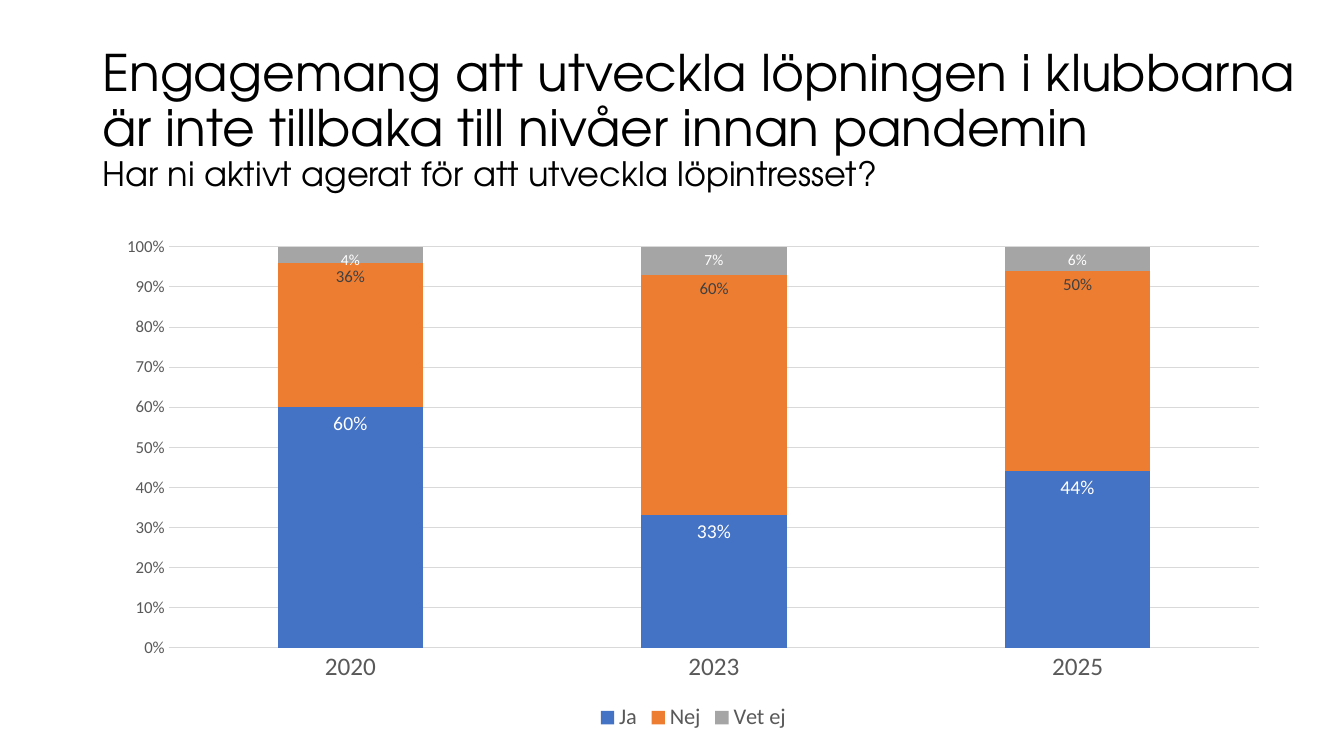
"""Build a slide on how running clubs worked to raise interest, by year."""
from pptx import Presentation
from pptx.chart.data import CategoryChartData
from pptx.dml.color import RGBColor
from pptx.enum.chart import XL_CHART_TYPE, XL_LABEL_POSITION, XL_LEGEND_POSITION, XL_TICK_MARK
from pptx.enum.text import MSO_ANCHOR
from pptx.util import Pt

COLORS = {"black": "000000", "white": "FFFFFF", "text": "595959", "dark": "404040",
          "grid": "D9D9D9", "blue": "4472C4", "orange": "ED7D31", "gray": "A5A5A5"}


def color(name):
    return RGBColor.from_string(COLORS[name])


def style(font, size, tint, face="Calibri"):
    font.size = Pt(size)
    font.name = face
    font.color.rgb = color(tint)


deck = Presentation()
deck.slide_width, deck.slide_height = Pt(960), Pt(540)
slide = deck.slides.add_slide(deck.slide_layouts[6])

title = slide.shapes.add_textbox(Pt(66), Pt(25), Pt(877), Pt(122.4))
frame = title.text_frame
frame.word_wrap = True
frame.vertical_anchor = MSO_ANCHOR.MIDDLE
frame.text = ("Engagemang att utveckla löpningen i klubbarna är inte tillbaka till nivåer innan pandemin"
              "\vHar ni aktivt agerat för att utveckla löpintresset?")
head = frame.paragraphs[0]
head.line_spacing = 0.9
for run, size in zip(head.runs, (36, 24)):
    style(run.font, size, "black", "TeX Gyre Adventor")

answers = [
    ("Ja", (0.6, 0.33, 0.44), "blue", 14, "white"),
    ("Nej", (0.36, 0.6, 0.5), "orange", 12, "dark"),
    ("Vet ej", (0.04, 0.07, 0.06), "gray", 11, "white"),
]
data = CategoryChartData(number_format="0%")
data.categories = ["2020", "2023", "2025"]
for name, shares, *_ in answers:
    data.add_series(name, shares)
chart = slide.shapes.add_chart(XL_CHART_TYPE.COLUMN_STACKED_100, Pt(74), Pt(162),
                               Pt(842.4), Pt(363.6), data).chart
style(chart.font, 10, "black")
chart.has_title = False
chart.has_legend = True
chart.legend.position = XL_LEGEND_POSITION.BOTTOM
chart.legend.include_in_layout = False
style(chart.legend.font, 16, "text")

years, scale = chart.category_axis, chart.value_axis
for axis, size in ((years, 18), (scale, 12)):
    axis.major_tick_mark = axis.minor_tick_mark = XL_TICK_MARK.NONE
    style(axis.tick_labels.font, size, "text")
scale.minimum_scale, scale.maximum_scale, scale.major_unit = 0, 1, 0.1
scale.tick_labels.number_format = "0%"
scale.tick_labels.number_format_is_linked = False
scale.format.line.fill.background()
for line in (years.format.line, scale.major_gridlines.format.line):
    line.color.rgb = color("grid")
    line.width = Pt(0.75)

plot = chart.plots[0]
plot.gap_width, plot.overlap = 150, 100
plot.vary_by_categories = False
for series, (name, shares, fill, size, tint) in zip(plot.series, answers):
    series.format.fill.solid()
    series.format.fill.fore_color.rgb = color(fill)
    labels = series.data_labels
    labels.show_value = True
    labels.number_format = "0%"
    labels.number_format_is_linked = False
    labels.position = XL_LABEL_POSITION.INSIDE_END
    style(labels.font, size, tint)

deck.save("out.pptx")
